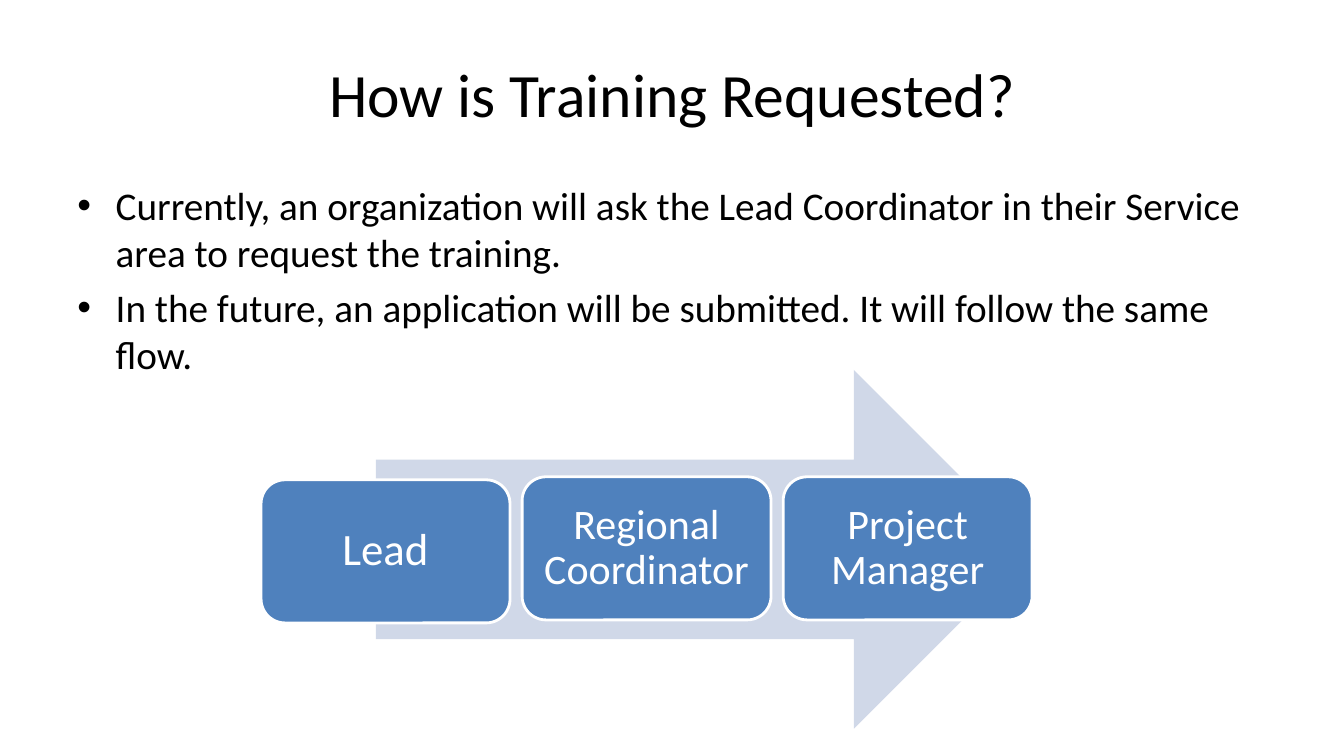
from lxml.etree import SubElement
from pptx import Presentation
from pptx.dml.color import RGBColor
from pptx.enum.shapes import MSO_SHAPE
from pptx.enum.text import MSO_ANCHOR, PP_ALIGN
from pptx.oxml.ns import qn
from pptx.util import Pt

PX = 9144  # EMU per px, 100 px to the inch
FONT = "Calibri"
COLOURS = {"page": "FFFFFF", "text": "000000", "arrow": "D0D8E8",
           "step": "4F81BD", "step_text": "FFFFFF"}
BULLETS = [
    "Currently, an organization will ask the Lead Coordinator in their "
    "Service area to request the training.",
    "In the future, an application will be submitted. It will follow the same flow.",
]
# Label, text size, drop below the common top edge
STEPS = [("Lead", 32, 3), ("Regional Coordinator", 30, 0), ("Project Manager", 30, 0)]


def colour(name):
    return RGBColor.from_string(COLOURS[name])


def emu(*lengths):
    return [length * PX for length in lengths]


def add_span(para, text, size, colour_name):
    span = para.add_run()
    span.text = text
    span.font.name = FONT
    span.font.size = Pt(size)
    span.font.color.rgb = colour(colour_name)


def add_title(page, box, text):
    title = page.shapes.title
    title.left, title.top, title.width, title.height = emu(*box)
    frame = title.text_frame
    frame.word_wrap = True
    frame.vertical_anchor = MSO_ANCHOR.MIDDLE
    para = frame.paragraphs[0]
    para.alignment = PP_ALIGN.CENTER
    add_span(para, text, 44, "text")


def add_bullets(page, box, lines):
    frame = page.shapes.add_textbox(*emu(*box)).text_frame
    frame.word_wrap = True
    for index, line in enumerate(lines):
        para = frame.add_paragraph() if index else frame.paragraphs[0]
        # Bullet with a hanging indent
        properties = para._p.get_or_add_pPr()
        properties.set("marL", str(38 * PX))
        properties.set("indent", str(-38 * PX))
        SubElement(properties, qn("a:buFont"), typeface="Arial")
        SubElement(properties, qn("a:buChar"), char="•")
        if index:
            para.space_before = Pt(5.6)
        add_span(para, line, 28, "text")


def add_filled(group, preset, box, fill):
    shape = group.shapes.add_shape(preset, *emu(*box))
    shape.shadow.inherit = False
    shape.fill.solid()
    shape.fill.fore_color.rgb = colour(fill)
    shape.line.fill.background()
    return shape


def add_step(group, box, label, size):
    step = add_filled(group, MSO_SHAPE.ROUNDED_RECTANGLE, box, "step")
    step.line.color.rgb = colour("page")
    step.line.width = Pt(2)
    frame = step.text_frame
    frame.word_wrap = True
    frame.vertical_anchor = MSO_ANCHOR.MIDDLE
    frame.margin_left = frame.margin_right = 12 * PX
    frame.margin_top = frame.margin_bottom = 12 * PX
    para = frame.paragraphs[0]
    para.alignment = PP_ALIGN.CENTER
    para.line_spacing = 0.9
    add_span(para, label, size, "step_text")


def add_flow(page, box, steps):
    left, top, width, height = box
    group = page.shapes.add_group_shape()
    # Arrow behind the steps
    add_filled(group, MSO_SHAPE.RIGHT_ARROW,
               (left + 114, top, width - 113, height), "arrow")
    # Equal steps across the box
    step_width, step_height, gap = 247, 142, 12
    for index, (label, size, drop) in enumerate(steps):
        place = (left + index * (step_width + gap), top + 106 + drop,
                 step_width, step_height)
        add_step(group, place, label, size)


def main():
    deck = Presentation()
    deck.slide_width, deck.slide_height = 12192000, 6858000
    page = deck.slides.add_slide(deck.slide_layouts[5])
    page.background.fill.solid()
    page.background.fill.fore_color.rgb = colour("page")
    add_title(page, (67, 30, 1200, 125), "How is Training Requested?")
    add_bullets(page, (67, 175, 1200, 495), BULLETS)
    add_flow(page, (259, 367, 765, 356), STEPS)
    deck.save("out.pptx")


if __name__ == "__main__":
    main()
